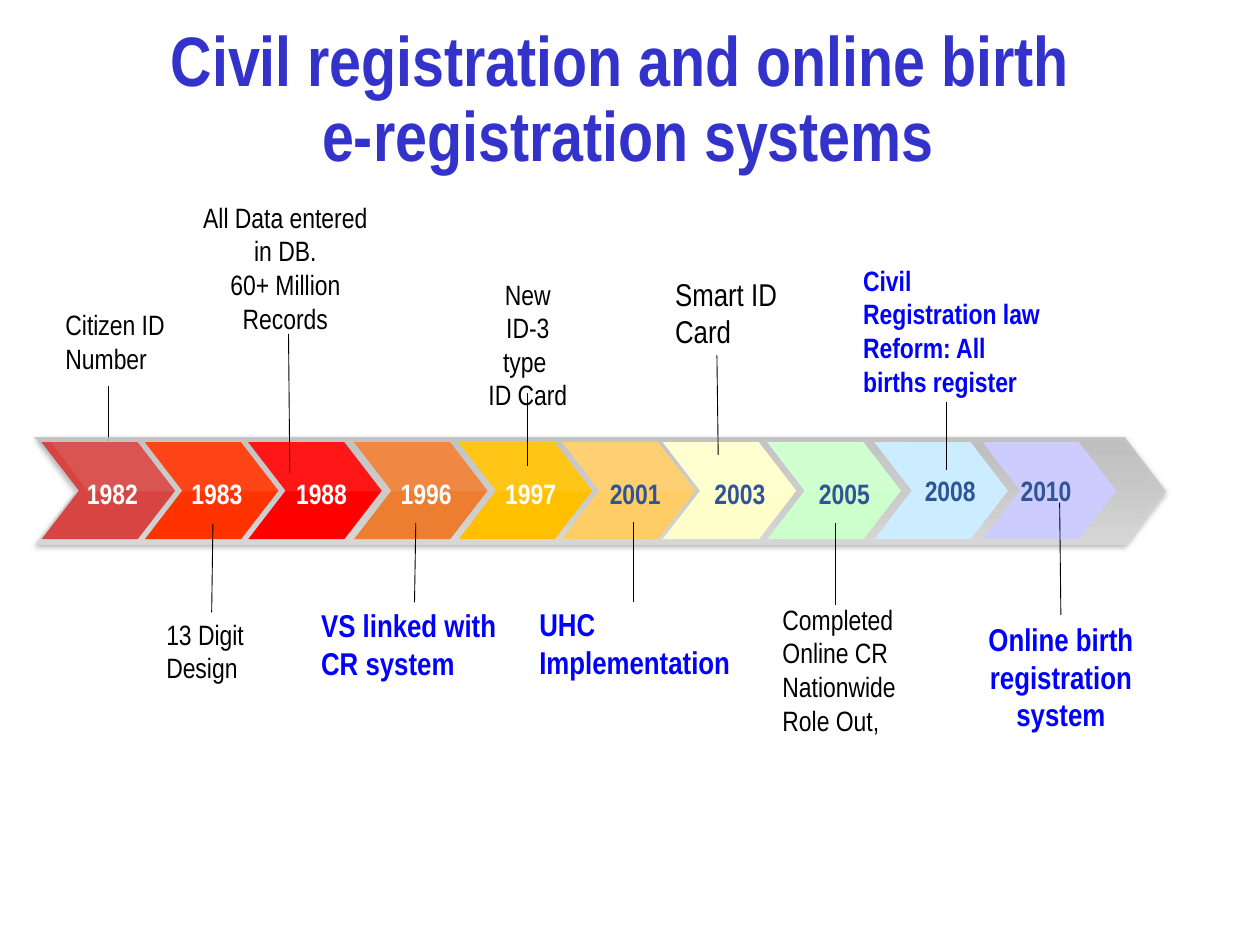
from copy import deepcopy

from lxml import etree
from pptx import Presentation
from pptx import util as u
from pptx.dml.color import RGBColor
from pptx.enum import shapes, text
from pptx.oxml.ns import qn

# The slide is a grid of 100 columns by 75 rows; all lengths are in its cells.
COLUMNS, ROWS = 100, 75
CELL = u.Inches(0.1)

FONT = "Arial Narrow"
BLACK = RGBColor(0x00, 0x00, 0x00)
WHITE = RGBColor(0xFF, 0xFF, 0xFF)
BLUE = RGBColor(0x00, 0x00, 0xFF)
TITLE_BLUE = RGBColor(0x33, 0x33, 0xCC)
YEAR_BLUE = RGBColor(0x2F, 0x55, 0x97)
BAR_TOP = RGBColor(0xBF, 0xBF, 0xBF)
BAR_BOTTOM = RGBColor(0xD8, 0xD8, 0xD8)
SHADOW_GREY = RGBColor(0x80, 0x80, 0x80)

CHEVRON_POINT = 0.385
STEP_TOP, STEP_WIDTH, STEP_HEIGHT = 35.1, 10.6, 7.7
YEAR_LEFT, YEAR_PITCH = 6.6, 8.3

# year, chevron left, chevron colour, year colour
EARLY_STEPS = [
    ("1982", 3.3, RGBColor(0xD6, 0x45, 0x41), WHITE),
    ("1983", 11.5, RGBColor(0xFF, 0x33, 0x00), WHITE),
    ("1988", 19.7, RGBColor(0xFF, 0x00, 0x00), WHITE),
    ("1996", 28.1, RGBColor(0xED, 0x7D, 0x31), WHITE),
    ("1997", 36.4, RGBColor(0xFF, 0xC0, 0x00), WHITE),
    ("2001", 44.6, RGBColor(0xFF, 0xCC, 0x66), YEAR_BLUE),
    ("2003", 52.6, RGBColor(0xFF, 0xFF, 0xCC), YEAR_BLUE),
    ("2005", 60.9, RGBColor(0xCC, 0xFF, 0xCC), YEAR_BLUE),
]
# year, chevron left, chevron colour, year left
LATE_STEPS = [
    ("2008", 69.4, RGBColor(0xCC, 0xEC, 0xFF), 73.1),
    ("2010", 78, RGBColor(0xCC, 0xCC, 0xFF), 80.7),
]

FIRST_LEADER = (8.6, 37.5, 8.6, 30.6)
LEADERS = [
    (16.9, 41.6, 16.8, 48.6),
    (23, 37.5, 22.9, 26.5),
    (50.3, 47.8, 50.3, 41.4),
    (75.1, 37.3, 75.1, 31.9),
    (33, 41.5, 32.9, 47.8),
    (41.9, 31.2, 41.9, 37),
    (56.9, 28.2, 57, 36.1),
    (84.1, 39.9, 84.2, 48.8),
    (66.3, 48, 66.3, 41.5),
]

PLAIN = {}
CENTRED = {"align": text.PP_ALIGN.CENTER}
LAW = {"bold": True, "color": BLUE}
MILESTONE = {"size": 18, "bold": True, "color": BLUE}
WIDE_INSETS = {"insets": (1, 0.5)}

# paragraphs, (left, top, width, height), format
EVENTS = [
    (["Citizen ID Number"], (4.5, 24, 10.3, 6.1), PLAIN),
    (["13 Digit Design"], (12.5, 48.6, 8.7, 6.1), PLAIN),
    (["All Data entered", " in DB. \n60+ Million Records"],
     (14.5, 15.5, 16.3, 11.5), CENTRED),
    (["Civil Registration law Reform: All births register"],
     (67.8, 20.5, 16.1, 11.5), LAW),
    (["New ID-3 type \nID Card"], (37.6, 21.6, 8.6, 8.8), CENTRED),
    (["UHC Implementation"], (42.1, 47.6, 16.9, 6.8), MILESTONE),
    (["Online birth registration system"], (76.8, 48.8, 14.8, 9.8),
     MILESTONE | CENTRED),
    (["VS linked with CR system"], (24.5, 47.6, 16.9, 7.1),
     MILESTONE | WIDE_INSETS),
    (["Smart ID Card"], (52.6, 21.3, 12, 7.1), {"size": 18} | WIDE_INSETS),
    (["Completed", "Online CR Nationwide", "Role Out,"],
     (61.4, 47.4, 10.9, 11.5), PLAIN),
]


def cells(*lengths):
    return [u.Emu(round(length * CELL)) for length in lengths]


def set_alpha(color_element, percent):
    etree.SubElement(color_element, qn("a:alpha"), val=str(percent * 1000))


def write(frame, paragraphs, *, size=16, color=BLACK, bold=False,
          align=None, insets=(0.7, 0.4), wrap=True, spacing=None):
    frame.word_wrap = wrap
    frame.auto_size = text.MSO_AUTO_SIZE.SHAPE_TO_FIT_TEXT
    frame.margin_left, frame.margin_top = cells(*insets)
    frame.margin_right, frame.margin_bottom = cells(*insets)
    for index, wording in enumerate(paragraphs):
        paragraph = frame.add_paragraph() if index else frame.paragraphs[0]
        paragraph.text = wording
        paragraph.alignment = align
        paragraph.line_spacing = spacing
        for run in paragraph.runs:
            run.font.name, run.font.size = FONT, u.Pt(size)
            run.font.bold, run.font.color.rgb = bold, color
        # Line breaks take the size of the text around them.
        for line_break in paragraph._p.findall(qn("a:br")):
            line_break.append(deepcopy(paragraph.runs[0]._r.rPr))


def add_label(slide, paragraphs, place, **style):
    box = slide.shapes.add_textbox(*cells(*place))
    write(box.text_frame, paragraphs, **style)


def add_title(slide):
    title = slide.shapes.title
    title.left, title.top, title.width, title.height = cells(3.6, 1.5, 92.5, 13.1)
    title.text_frame.vertical_anchor = text.MSO_ANCHOR.MIDDLE
    write(title.text_frame,
          ["Civil registration and online birth \ne-registration systems"],
          size=40, color=TITLE_BLUE, bold=True, spacing=0.9,
          **CENTRED, **WIDE_INSETS)


def add_chevron(slide, *place):
    chevron = slide.shapes.add_shape(shapes.MSO_SHAPE.CHEVRON, *cells(*place))
    chevron.adjustments[0] = CHEVRON_POINT
    chevron.shadow.inherit = False
    chevron.line.fill.background()
    return chevron


def add_bar(slide):
    """Add the grey arrow that lies under all the steps."""
    bar = add_chevron(slide, 2.7, 34.7, 89.8, 8.5)
    bar.fill.gradient()
    bar.fill.gradient_angle = 270
    for stop, color, position in zip(bar.fill.gradient_stops,
                                     (BAR_TOP, BAR_BOTTOM), (0, 1)):
        stop.color.rgb, stop.position = color, position
    properties = bar._element.spPr
    set_alpha(next(properties.iter(qn("a:srgbClr"))), 84)
    shadow = etree.SubElement(
        properties.find(qn("a:effectLst")), qn("a:outerShdw"),
        blurRad=str(u.Pt(3)), dist=str(u.Pt(1)), dir="5400000",
        algn="t", rotWithShape="0")
    set_alpha(etree.SubElement(shadow, qn("a:srgbClr"), val=str(SHADOW_GREY)), 59)


def add_step(slide, left, color):
    step = add_chevron(slide, left, STEP_TOP, STEP_WIDTH, STEP_HEIGHT)
    step.fill.solid()
    step.fill.fore_color.rgb = color


def add_year(slide, year, left, top, color):
    add_label(slide, [year], (left, top, 4.7, 3.3), color=color, bold=True,
              insets=(0.3, 0.3), wrap=False)


def add_gloss(slide):
    """Add the faint light over the upper half of the early steps."""
    outline = slide.shapes.build_freeform(68.7, 35.1, scale=CELL)
    outline.add_line_segments([(71.8, 38.8), (3.9, 38.8), (3.9, 35.1)])
    gloss = outline.convert_to_shape()
    gloss.rotation = 180
    gloss.shadow.inherit = False
    gloss.line.fill.background()
    gloss.fill.solid()
    gloss.fill.fore_color.rgb = WHITE
    set_alpha(next(gloss._element.spPr.iter(qn("a:srgbClr"))), 9)


def add_leader(slide, ends):
    leader = slide.shapes.add_connector(shapes.MSO_CONNECTOR.STRAIGHT, *cells(*ends))
    leader.line.color.rgb = BLACK
    leader.line.width = u.Pt(0.5)
    etree.SubElement(leader._element.spPr, qn("a:effectLst"))


def main():
    deck = Presentation()
    deck.slide_width, deck.slide_height = cells(COLUMNS, ROWS)
    slide = deck.slides.add_slide(deck.slide_layouts[5])
    add_title(slide)
    add_leader(slide, FIRST_LEADER)
    add_bar(slide)
    for _, left, fill, _ in EARLY_STEPS:
        add_step(slide, left, fill)
    add_gloss(slide)
    for column, (year, _, _, color) in enumerate(EARLY_STEPS):
        add_year(slide, year, YEAR_LEFT + column * YEAR_PITCH, 37.5, color)
    for year, left, fill, year_left in LATE_STEPS:
        add_step(slide, left, fill)
        add_year(slide, year, year_left, 37.3, YEAR_BLUE)
    for ends in LEADERS:
        add_leader(slide, ends)
    for paragraphs, place, style in EVENTS:
        add_label(slide, paragraphs, place, **style)
    deck.save("out.pptx")


if __name__ == "__main__":
    main()
